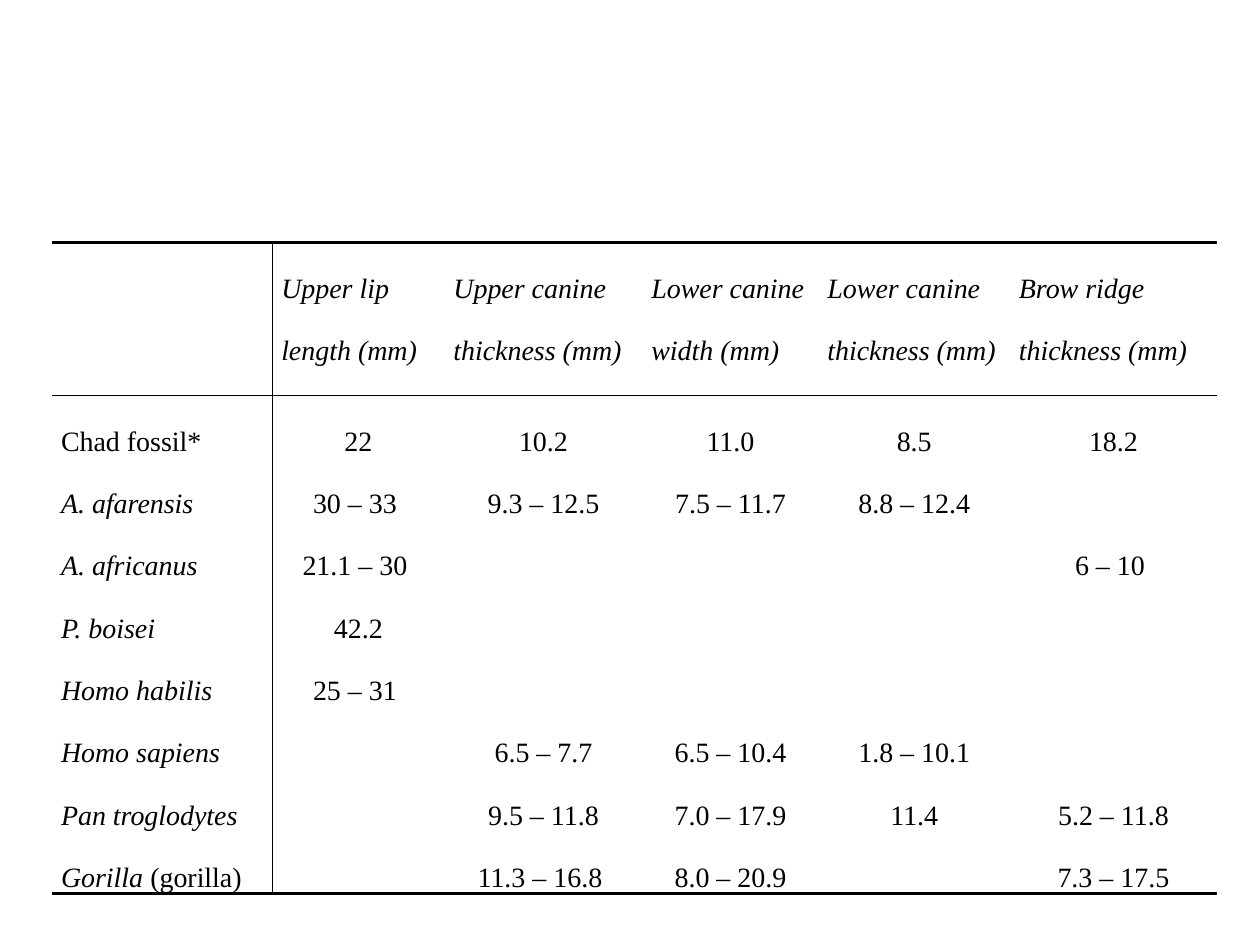
from dataclasses import dataclass

import pptx
import pptx.dml.color
import pptx.enum.text
import pptx.oxml.ns
import pptx.table
import pptx.text.text
import pptx.util
from lxml import etree

Cm = pptx.util.Cm
Pt = pptx.util.Pt
COLORS = {"text": "000000", "rule": "000000"}
FONT = "Times New Roman"
OUTER_RULE, INNER_RULE = 1.5, 1
COLUMN_WIDTHS = [4.44, 3.47, 3.99, 3.55, 3.86, 4.17]
HEADER_HEIGHT, SPECIES_HEIGHT = 3.08, 1.02


@dataclass
class Species:
    name: str
    values: list[str]
    plain_suffix: str = ""
    italic: bool = True


MEASUREMENTS = [
    "Upper lip length (mm)", "Upper canine thickness (mm)", "Lower canine width (mm)",
    "Lower canine thickness (mm)", "Brow ridge thickness (mm)",
]
SPECIES = [
    Species("Chad fossil*", ["22", "10.2", "11.0", "8.5", "18.2"], italic=False),
    Species("A. afarensis", ["30 – 33 ", "9.3 – 12.5", "7.5 – 11.7", "8.8 – 12.4", ""]),
    Species("A. africanus", ["21.1 – 30 ", "", "", "", "6 – 10 "]),
    Species("P. boisei", ["42.2", "", "", "", ""]),
    Species("Homo habilis", ["25 – 31 ", "", "", "", ""]),
    Species("Homo sapiens", ["", "6.5 – 7.7", "6.5 – 10.4", "1.8 – 10.1", ""]),
    Species("Pan troglodytes", ["", "9.5 – 11.8", "7.0 – 17.9", "11.4", "5.2 – 11.8"]),
    Species("Gorilla ", ["", "11.3 – 16.8 ", "8.0 – 20.9", "", "7.3 – 17.5"], "(gorilla)"),
]


def write(cell: pptx.table._Cell, text: str, *, italic: bool = False,
          centered: bool = False) -> pptx.text.text._Paragraph:
    cell.margin_left = cell.margin_right = Cm(0.18)
    cell.margin_top = cell.margin_bottom = 0
    paragraph = cell.text_frame.paragraphs[0]
    paragraph.line_spacing = 2.0
    align = pptx.enum.text.PP_ALIGN
    paragraph.alignment = align.CENTER if centered else align.LEFT
    run = paragraph.add_run()
    run.text = text
    run.font.name = FONT
    run.font.size = Pt(16)
    run.font.italic = italic
    run.font.color.rgb = pptx.dml.color.RGBColor.from_string(COLORS["text"])
    return paragraph


def rule_cell(cell: pptx.table._Cell, widths: dict[str, float]) -> None:
    qn = pptx.oxml.ns.qn
    properties = cell._tc.get_or_add_tcPr()
    for side in "LRTB":
        line = etree.SubElement(properties, qn(f"a:ln{side}"))
        if side in widths:
            line.set("w", str(Pt(widths[side])))
            fill = etree.SubElement(line, qn("a:solidFill"))
            etree.SubElement(fill, qn("a:srgbClr")).set("val", COLORS["rule"])
        else:
            etree.SubElement(line, qn("a:noFill"))
    cell.fill.background()


def cell_rules(row: int, column: int) -> dict[str, float]:
    widths = {}
    if row <= 1:
        widths["T"] = OUTER_RULE if row == 0 else INNER_RULE
    if row == 0:
        widths["B"] = INNER_RULE
    elif row == len(SPECIES):
        widths["B"] = OUTER_RULE
    if column <= 1:
        widths["R" if column == 0 else "L"] = INNER_RULE
    return widths


def write_species(table: pptx.table.Table, row: int, species: Species) -> None:
    name_cell = table.cell(row, 0)
    name = write(name_cell, species.name, italic=species.italic)
    if species.plain_suffix:
        write(name_cell, species.plain_suffix)
    indent = name._p.get_or_add_pPr()
    indent.set("marL", str(Cm(0.3)))
    indent.set("indent", str(-Cm(0.3)))
    for column, value in enumerate(species.values, 1):
        if value:
            write(table.cell(row, column), value, centered=True)


def main() -> None:
    presentation = pptx.Presentation()
    presentation.slide_width, presentation.slide_height = Cm(25.4), Cm(19.05)
    slide = presentation.slides.add_slide(presentation.slide_layouts[6])
    frame = slide.shapes.add_table(
        len(SPECIES) + 1, len(COLUMN_WIDTHS), Cm(1.05), Cm(4.89), Cm(23.48), Cm(13.92))
    table = frame.table
    table.first_row = table.horz_banding = False
    for column, width in zip(table.columns, COLUMN_WIDTHS):
        column.width = Cm(width)
    for index, row in enumerate(table.rows):
        row.height = Cm(SPECIES_HEIGHT if index else HEADER_HEIGHT)
        for column, cell in enumerate(row.cells):
            rule_cell(cell, cell_rules(index, column))
    frame.height = Cm(13.92)

    for column, measurement in enumerate(MEASUREMENTS, 1):
        write(table.cell(0, column), measurement, italic=True)
    for row, species in enumerate(SPECIES, 1):
        write_species(table, row, species)
    presentation.save("out.pptx")


if __name__ == "__main__":
    main()
